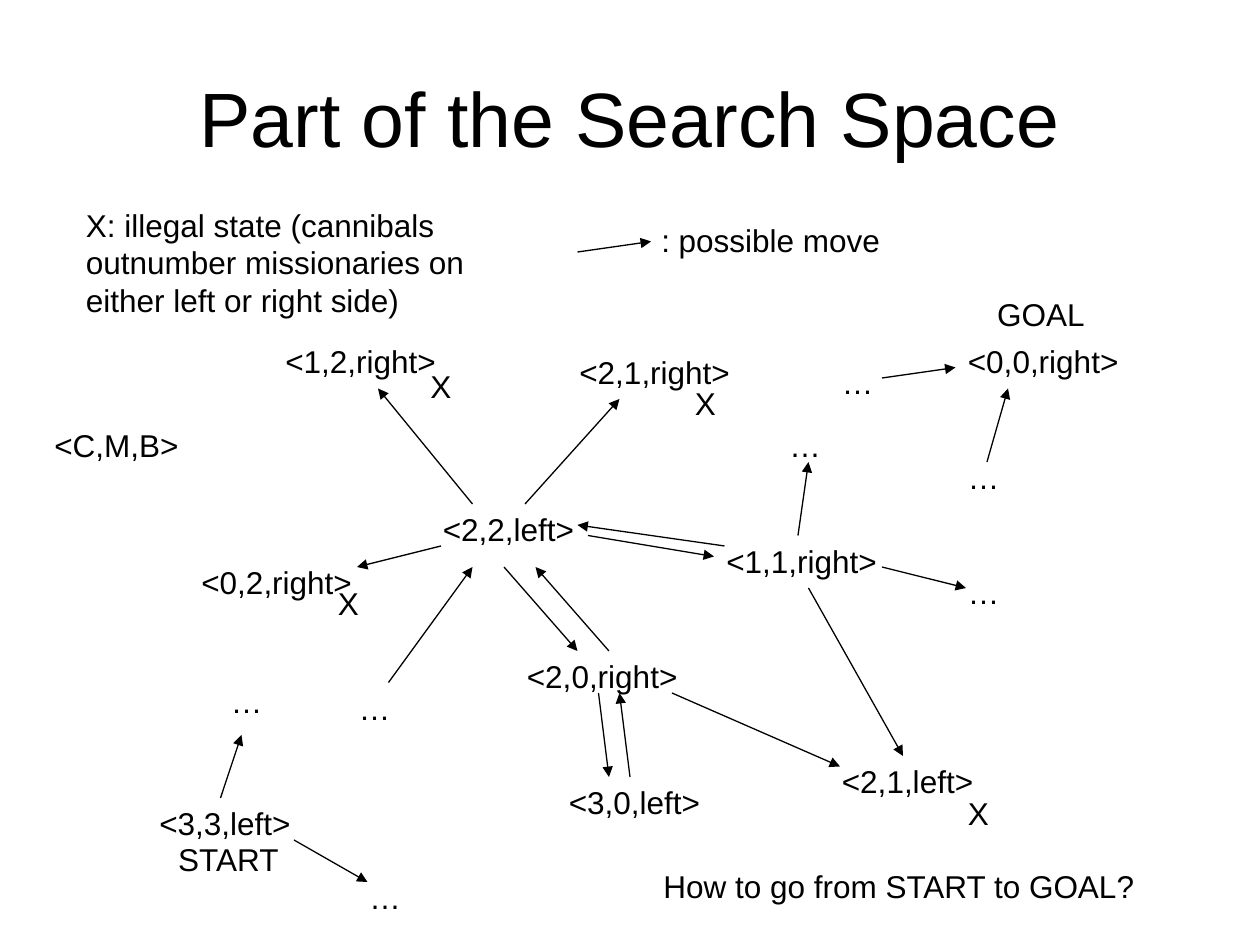
from pptx import Presentation
from pptx.dml.color import RGBColor
from pptx.enum.shapes import MSO_CONNECTOR
from pptx.enum.text import MSO_ANCHOR, MSO_AUTO_SIZE, PP_ALIGN
from pptx.oxml.ns import qn
from pptx.util import Inches, Pt
from lxml import etree

STRAIGHT = MSO_CONNECTOR.STRAIGHT
MIDDLE = MSO_ANCHOR.MIDDLE
FIT_SHAPE = MSO_AUTO_SIZE.SHAPE_TO_FIT_TEXT
CENTER, LEFT = PP_ALIGN.CENTER, PP_ALIGN.LEFT

COLORS = {"background": "FFFFFF", "ink": "000000"}
FONT = "Arial"
COLUMNS, ROWS = 120, 90
SLIDE_WIDTH, SLIDE_HEIGHT = Inches(10), Inches(7.5)
LINE_HEIGHT = 4.8

LEFT_STATES = [
    ("<2,2,left>", 41, 48), ("<3,0,left>", 53, 74),
    ("<3,3,left>", 14, 76), ("<2,1,left>", 79, 72),
]
RIGHT_STATES = [
    ("<2,0,right>", 49, 62), ("<1,2,right>", 26, 32), ("<0,2,right>", 18, 53),
    ("<2,1,right>", 54, 33), ("<1,1,right>", 68, 51), ("<0,0,right>", 91, 32),
]
UNEXPLORED = [
    (20.8, 64.4), (34, 83), (91, 54), (74, 40), (79, 34), (91, 43), (33, 65),
]
ILLEGAL_MARKS = [(39.8, 34.4), (31, 55), (91, 75), (65, 36)]
MOVES = [
    (45, 48, 36, 37), (50, 48, 59, 38), (56, 51, 68, 53), (69, 52, 55, 50),
    (42, 52, 34, 54), (48, 54, 55, 62), (58, 62, 51, 54), (57, 66, 58, 74),
    (60, 74, 59, 66), (64, 66, 80, 73), (77, 56, 86, 72), (76, 51, 77, 44),
    (84, 54, 92, 56), (37, 65, 45, 54), (21, 76, 23, 70), (28, 80, 35, 84),
    (94, 44, 96, 37), (84, 36, 91, 35),
]
LEGEND_MOVE = (55, 24, 62, 23)
CAPTIONS = [
    ("How to go from START to GOAL?", 62, 82, 47.6),
    ("START", 15.8, 79.4, 12.2),
    ("GOAL", 93.8, 27.5, 10.8),
    (": possible move", 61.8, 20.5, 23.3),
    ("<C,M,B>", 4, 40, 14.4),
]
LEGEND = "X: illegal state (cannibals\noutnumber missionaries on\neither left or right side)"


def grid_x(column):
    """Return the horizontal length of a number of grid columns."""
    return round(SLIDE_WIDTH * column / COLUMNS)


def grid_y(row):
    """Return the vertical length of a number of grid rows."""
    return round(SLIDE_HEIGHT * row / ROWS)


def add_text(slide, text, column, row, width, height=LINE_HEIGHT, size=18, align=LEFT):
    """Add a text box placed on the grid and return its text frame."""
    shape = slide.shapes.add_textbox(
        grid_x(column), grid_y(row), grid_x(width), grid_y(height))
    text_frame = shape.text_frame
    text_frame.text = text
    text_frame.word_wrap = False
    text_frame.auto_size = FIT_SHAPE
    for paragraph in text_frame.paragraphs:
        paragraph.alignment = align
        for run in paragraph.runs:
            run.font.name = FONT
            run.font.size = Pt(size)
            run.font.color.rgb = RGBColor.from_string(COLORS["ink"])
    return text_frame


def add_title(slide, text):
    """Add the centred slide title."""
    text_frame = add_text(slide, text, 6, 3.6, 108, 15, size=44, align=CENTER)
    text_frame.auto_size = MSO_AUTO_SIZE.NONE
    text_frame.word_wrap = True
    text_frame.vertical_anchor = MIDDLE


def add_move(slide, start_column, start_row, end_column, end_row):
    """Add an arrow for one possible move."""
    connector = slide.shapes.add_connector(
        STRAIGHT, grid_x(start_column), grid_y(start_row),
        grid_x(end_column), grid_y(end_row))
    connector.line.color.rgb = RGBColor.from_string(COLORS["ink"])
    connector.line.width = Pt(0.75)
    etree.SubElement(connector.line._get_or_add_ln(), qn("a:tailEnd"), type="triangle")
    etree.SubElement(connector._element.spPr, qn("a:effectLst"))


def main():
    """Build the search space slide and save it."""
    presentation = Presentation()
    presentation.slide_width = SLIDE_WIDTH
    presentation.slide_height = SLIDE_HEIGHT
    slide = presentation.slides.add_slide(presentation.slide_layouts[6])
    fill = slide.background.fill
    fill.solid()
    fill.fore_color.rgb = RGBColor.from_string(COLORS["background"])

    add_title(slide, "Part of the Search Space")
    for text, column, row in LEFT_STATES:
        add_text(slide, text, column, row, 14.9)
    for text, column, row in RIGHT_STATES:
        add_text(slide, text, column, row, 16.8)
    for move in MOVES + [LEGEND_MOVE]:
        add_move(slide, *move)
    for column, row in UNEXPLORED:
        add_text(slide, "…", column, row, 5.4)
    for column, row in ILLEGAL_MARKS:
        add_text(slide, "X", column, row, 4.4)
    for caption in CAPTIONS:
        add_text(slide, *caption)
    add_text(slide, LEGEND, 7, 19, 38.4, 12)
    presentation.save("out.pptx")


if __name__ == "__main__":
    main()
